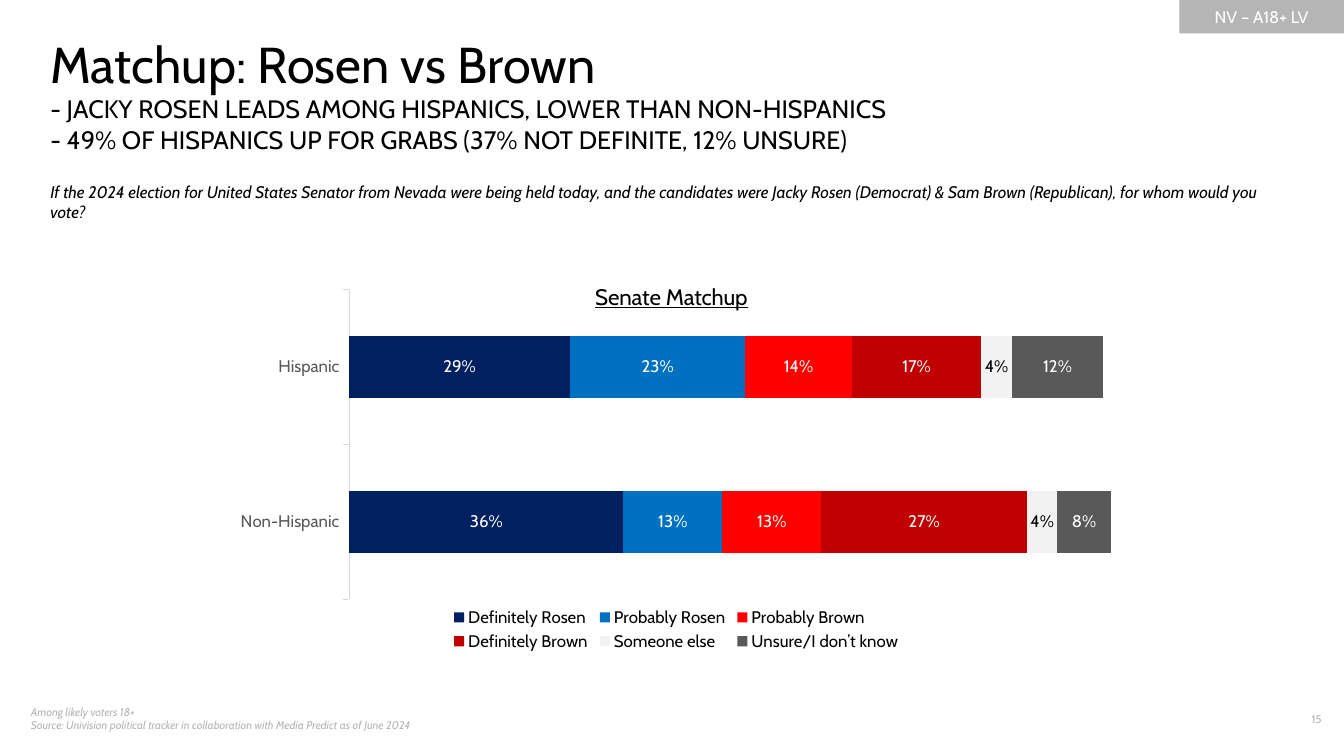
from lxml import etree
from pptx import Presentation
from pptx.chart.data import CategoryChartData
from pptx.dml.color import RGBColor
from pptx.enum.chart import XL_CHART_TYPE, XL_LABEL_POSITION, XL_LEGEND_POSITION, XL_TICK_MARK
from pptx.enum.shapes import MSO_SHAPE
from pptx.enum.text import MSO_ANCHOR, PP_ALIGN
from pptx.util import Cm, Pt

BAR = XL_CHART_TYPE.BAR_STACKED
MID = XL_LABEL_POSITION.CENTER
BELOW = XL_LEGEND_POSITION.BOTTOM
TICK = XL_TICK_MARK.OUTSIDE
RECT = MSO_SHAPE.RECTANGLE
AMID = MSO_ANCHOR.MIDDLE
LEFT, CENTER, RIGHT = PP_ALIGN.LEFT, PP_ALIGN.CENTER, PP_ALIGN.RIGHT
FACE = "Cabin"
BLACK, WHITE, GRAY, DARK = "000000", "FFFFFF", "B5B5B5", "595959"
CHART_NS = "http://schemas.openxmlformats.org/drawingml/2006/chart"

GROUPS = ["Hispanic", "Non-Hispanic"]
VOTES = [
    ("Definitely Rosen", (0.29, 0.36), "002060", WHITE),
    ("Probably Rosen", (0.23, 0.13), "0070C0", WHITE),
    ("Probably Brown", (0.14, 0.13), "FF0000", WHITE),
    ("Definitely Brown", (0.17, 0.27), "C00000", WHITE),
    ("Someone else", (0.04, 0.04), "F2F2F2", BLACK),
    ("Unsure/I don’t know", (0.12, 0.08), DARK, WHITE),
]


def color(code):
    return RGBColor.from_string(code)


def apply(item, values):
    for name, value in values.items():
        setattr(item, name, value)


def tag(name):
    return f"{{{CHART_NS}}}{name}"


def place(node, index, **sizes):
    for old in node.findall(tag("layout")):
        node.remove(old)
    layout = etree.Element(tag("layout"))
    manual = etree.SubElement(layout, tag("manualLayout"))
    for name, value in sizes.items():
        etree.SubElement(manual, tag(name), val=str(value))
    node.insert(index, layout)


class Deck:
    def __init__(self):
        self.show = Presentation()
        apply(self.show, {"slide_width": Cm(33.87), "slide_height": Cm(19.05)})
        self.slide = self.show.slides.add_slide(self.show.slide_layouts[6])

    def style(self, font, size, code=BLACK, **more):
        apply(font, {"name": FACE, "size": Pt(size), **more})
        font.color.rgb = color(code)

    def fill(self, frame, parts, code=BLACK, align=LEFT, italic=False):
        frame.word_wrap = True
        for index, (size, lines) in enumerate(parts):
            para = frame.add_paragraph() if index else frame.paragraphs[0]
            para.alignment = align
            for row, line in enumerate(lines):
                if row:
                    para.add_line_break()
                run = para.add_run()
                run.text = line
                self.style(run.font, size, code, italic=italic)

    def text(self, box, parts, inset=None, **look):
        frame = self.slide.shapes.add_textbox(*map(Cm, box)).text_frame
        if inset is not None:
            sides = ("left", "top", "right", "bottom")
            apply(frame, {f"margin_{side}": Cm(inset) for side in sides})
        self.fill(frame, parts, **look)

    def badge(self, box, label):
        shape = self.slide.shapes.add_shape(RECT, *map(Cm, box))
        shape.shadow.inherit = False
        shape.fill.solid()
        shape.fill.fore_color.rgb = color(GRAY)
        shape.line.fill.background()
        shape.text_frame.vertical_anchor = AMID
        self.fill(shape.text_frame, [(12, [label])], code=WHITE, align=CENTER)

    def chart(self, box, title):
        data = CategoryChartData(number_format="0%")
        data.categories = GROUPS
        for name, values, *_ in VOTES:
            data.add_series(name, values)
        chart = self.slide.shapes.add_chart(BAR, *map(Cm, box), data).chart
        self.style(chart.font, 10)
        apply(chart, {"has_title": True, "has_legend": True})
        head = chart.chart_title.text_frame.paragraphs[0].add_run()
        head.text = title
        self.style(head.font, 16, bold=False, underline=True)
        apply(chart.legend, {"position": BELOW, "include_in_layout": False})
        self.style(chart.legend.font, 12)
        self.axes(chart)
        plot = chart.plots[0]
        apply(plot, {"gap_width": 150, "overlap": 100, "vary_by_categories": False})
        for series, (_, _, fill, ink) in zip(plot.series, VOTES):
            series.format.fill.solid()
            series.format.fill.fore_color.rgb = color(fill)
            labels = series.data_labels
            apply(labels, {"show_value": True, "position": MID,
                           "number_format": "0%", "number_format_is_linked": False})
            self.style(labels.font, 12, ink)
        root = chart._chartSpace
        edge = {"xMode": "edge", "yMode": "edge"}
        place(root.xpath("c:chart/c:title")[0], 1, **edge, x=0.41, y=0.05)
        place(root.xpath("c:chart/c:plotArea")[0], 0, layoutTarget="inner",
              **edge, x=0.14, y=0.08, w=0.85, h=0.78)
        place(root.xpath("c:chart/c:legend")[0], 1,
              **edge, x=0.25, y=0.87, w=0.51, h=0.13)

    def axes(self, chart):
        apply(chart.value_axis, {"visible": False, "has_major_gridlines": False,
                                 "minimum_scale": 0, "maximum_scale": 1})
        axis = chart.category_axis
        apply(axis, {"reverse_order": True, "major_tick_mark": TICK})
        self.style(axis.tick_labels.font, 12, DARK)
        axis.format.line.width = Pt(0.75)
        axis.format.line.color.rgb = color("D9D9D9")


def main():
    deck = Deck()
    deck.badge((29.72, 0, 4.15, 0.84), "NV – A18+ LV")
    deck.text((0.53, 17.65, 12.98, 1.02), [(8, [
        "Among likely voters 18+",
        "Source: Univision political tracker in collaboration with Media Predict as of June 2024",
    ])], code=GRAY, italic=True)
    deck.text((31.32, 17.83, 2.24, 0.69), [(8, ["15"])], code=GRAY, align=RIGHT)
    deck.chart((5.64, 6.5, 22.58, 10.01), "Senate Matchup")
    deck.text((1.27, 0.84, 30.48, 3.07), [
        (36, ["Matchup: Rosen vs Brown"]),
        (18, ["- JACKY ROSEN LEADS AMONG HISPANICS, LOWER THAN NON-HISPANICS",
              "- 49% OF HISPANICS UP FOR GRABS (37% NOT DEFINITE, 12% UNSURE)"]),
    ], inset=0)
    deck.text((1.27, 4.57, 30.48, 1.02), [(12, [
        "If the 2024 election for United States Senator from Nevada were being held today, "
        "and the candidates were Jacky Rosen (Democrat) & Sam Brown (Republican), "
        "for whom would you vote?",
    ])], inset=0, italic=True)
    deck.show.save("out.pptx")


if __name__ == "__main__":
    main()
